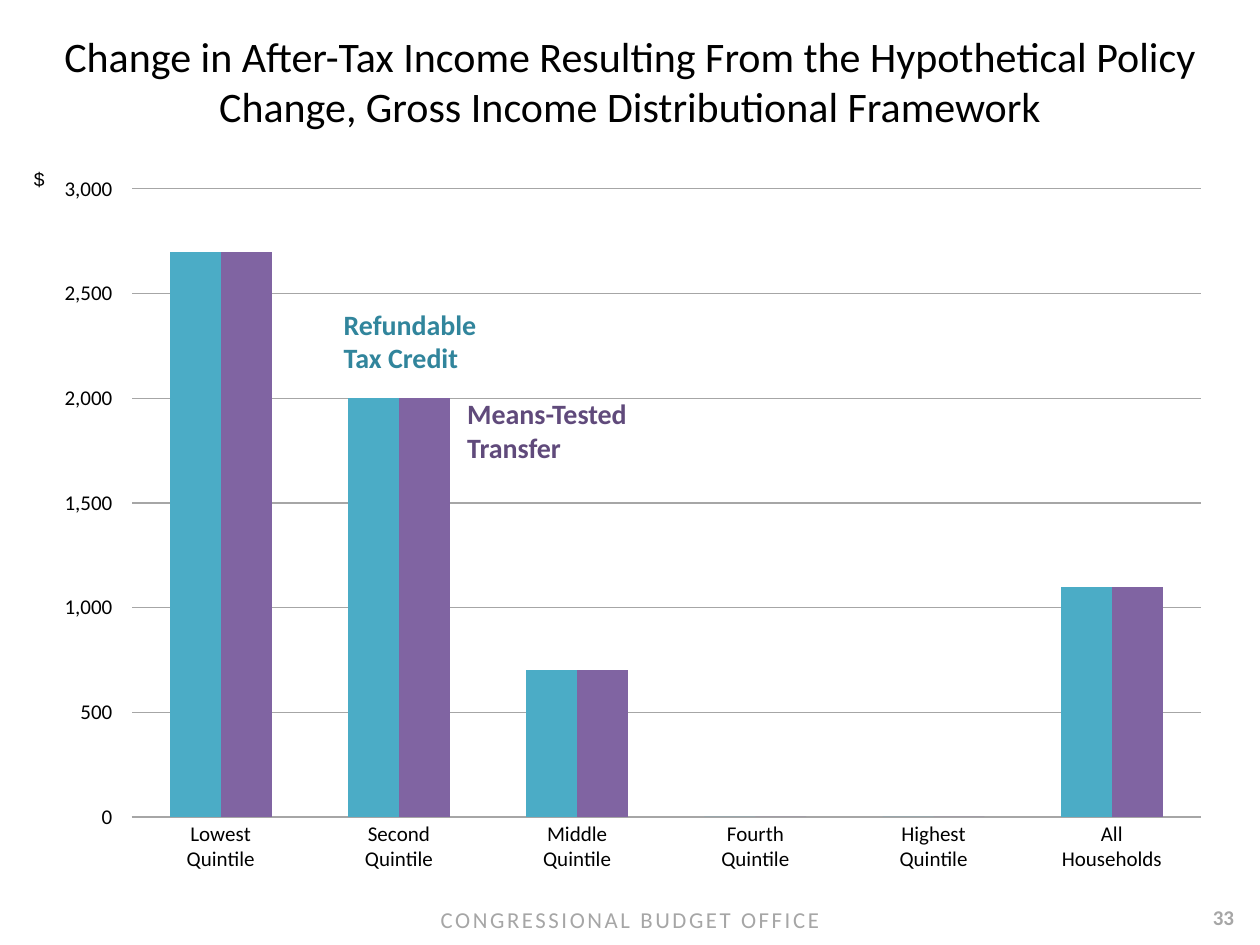
from lxml import etree
from pptx import Presentation
from pptx.chart.data import CategoryChartData
from pptx.dml.color import RGBColor
from pptx.enum.chart import XL_CHART_TYPE, XL_TICK_MARK
from pptx.enum.text import MSO_ANCHOR, MSO_AUTO_SIZE, PP_ALIGN
from pptx.oxml import parse_xml
from pptx.oxml.ns import nsdecls
from pptx.util import Inches, Pt

BLACK = RGBColor(0x00, 0x00, 0x00)
GRAY = RGBColor(0xA6, 0xA6, 0xA6)
TEAL = RGBColor(0x4B, 0xAC, 0xC6)
DARK_TEAL = RGBColor(0x31, 0x85, 0x9C)
PURPLE = RGBColor(0x80, 0x64, 0xA2)
DARK_PURPLE = RGBColor(0x60, 0x4A, 0x7B)

TITLE = ("Change in After-Tax Income Resulting From the Hypothetical Policy "
         "Change, Gross Income Distributional Framework")
CATEGORIES = ["Lowest\nQuintile", "Second\nQuintile", "Middle\nQuintile",
              "Fourth\nQuintile", "Highest\nQuintile", "All\nHouseholds"]
SERIES = [
    ("Series 1", [2700, 2000, 700, 0, 0, 1100], TEAL),
    ("Series 2", [2700, 2000, 700, 0, 0, 1100], PURPLE),
]
CHART_BOX = (0.29, 1.27, 9.43, 5.73)
PLOT_AREA = {"x": 0.08, "y": 0.04, "w": 0.9, "h": 0.87}  # shares of the chart

# text, box, font, size, colour, bold
CHART_LABELS = [
    ("Refundable\nTax Credit", (2.63, 2.39, 1.27, 0.64), "Calibri", 16, DARK_TEAL, True),
    ("Means-Tested\nTransfer", (3.61, 3.1, 1.5, 0.64), "Calibri", 16, DARK_PURPLE, True),
    ("$", (0.17, 1.28, 0.29, 0.29), "Arial", 11, BLACK, False),
]


def place(box):
    return [Inches(v) for v in box]


def format_text(tf, font, size, color, bold=False, align=PP_ALIGN.LEFT):
    for p in tf.paragraphs:
        p.alignment = align
        for r in p.runs:
            r.font.name, r.font.size, r.font.bold = font, Pt(size), bold
            r.font.color.rgb = color


def add_text(s, text, box, font, size, color, bold=False,
             align=PP_ALIGN.LEFT, wrap=False):
    tf = s.shapes.add_textbox(*place(box)).text_frame
    tf.word_wrap = wrap
    tf.text = text
    format_text(tf, font, size, color, bold, align)
    return tf


def add_title(s):
    title = s.shapes.title
    title.left, title.top, title.width, title.height = place((0, 0.19, 10, 0.91))
    tf = title.text_frame
    tf.text = TITLE
    tf.auto_size = MSO_AUTO_SIZE.NONE
    tf.vertical_anchor = MSO_ANCHOR.TOP
    format_text(tf, "Calibri", 24, BLACK, align=PP_ALIGN.CENTER)


def set_plot_area(chart):
    """Fix the inner plot area, which python-pptx cannot do by itself."""
    plot_area = chart.plots[0]._element.getparent()
    for old in plot_area.xpath("c:layout"):
        plot_area.remove(old)
    layout = parse_xml(f"<c:layout {nsdecls('c')}><c:manualLayout/></c:layout>")
    settings = [("layoutTarget", "inner"), ("xMode", "edge"), ("yMode", "edge")]
    for name, value in settings + list(PLOT_AREA.items()):
        tag = etree.QName(layout.nsmap["c"], name)
        etree.SubElement(layout[0], tag).set("val", str(value))
    plot_area.insert(0, layout)


def add_income_chart(s):
    data = CategoryChartData()
    data.categories = CATEGORIES
    for name, values, _ in SERIES:
        data.add_series(name, values)
    chart = s.shapes.add_chart(
        XL_CHART_TYPE.COLUMN_CLUSTERED, *place(CHART_BOX), data).chart
    chart.has_legend = chart.has_title = False
    chart.font.name, chart.font.size = "Calibri", Pt(10)
    chart.font.color.rgb = BLACK

    plot = chart.plots[0]
    plot.vary_by_categories = False
    plot.gap_width, plot.overlap = 150, 0
    for series, (_, _, color) in zip(plot.series, SERIES):
        series.format.fill.solid()
        series.format.fill.fore_color.rgb = color

    value_axis, category_axis = chart.value_axis, chart.category_axis
    for axis in (value_axis, category_axis):
        axis.major_tick_mark = axis.minor_tick_mark = XL_TICK_MARK.NONE
        axis.tick_labels.font.size = Pt(12)
    value_axis.minimum_scale, value_axis.maximum_scale = 0, 3000
    value_axis.major_unit = 500
    value_axis.tick_labels.number_format = "#,##0___)"
    value_axis.tick_labels.number_format_is_linked = False
    value_axis.format.line.fill.background()
    value_axis.has_major_gridlines = True
    for line in (value_axis.major_gridlines.format.line, category_axis.format.line):
        line.color.rgb, line.width = GRAY, Pt(0.75)
    set_plot_area(chart)


def add_footer(s):
    add_text(s, "33", (9.42, 7.13, 0.58, 0.31), "Calibri", 12, GRAY, True,
             PP_ALIGN.CENTER, wrap=True)
    tf = add_text(s, "CONGRESSIONAL BUDGET OFFICE", (0, 7.08, 10, 0.38), "Calibri",
                  13, GRAY, align=PP_ALIGN.CENTER, wrap=True)
    tf.vertical_anchor = MSO_ANCHOR.MIDDLE
    tf.margin_top = Inches(0.1)
    tf.paragraphs[0].runs[0].font._element.set("spc", "150")


def main():
    prs = Presentation()
    prs.slide_width, prs.slide_height = Inches(10), Inches(7.5)
    s = prs.slides.add_slide(prs.slide_layouts[5])
    add_footer(s)
    add_income_chart(s)
    for label in CHART_LABELS:
        add_text(s, *label)
    add_title(s)
    prs.save("out.pptx")


if __name__ == "__main__":
    main()
